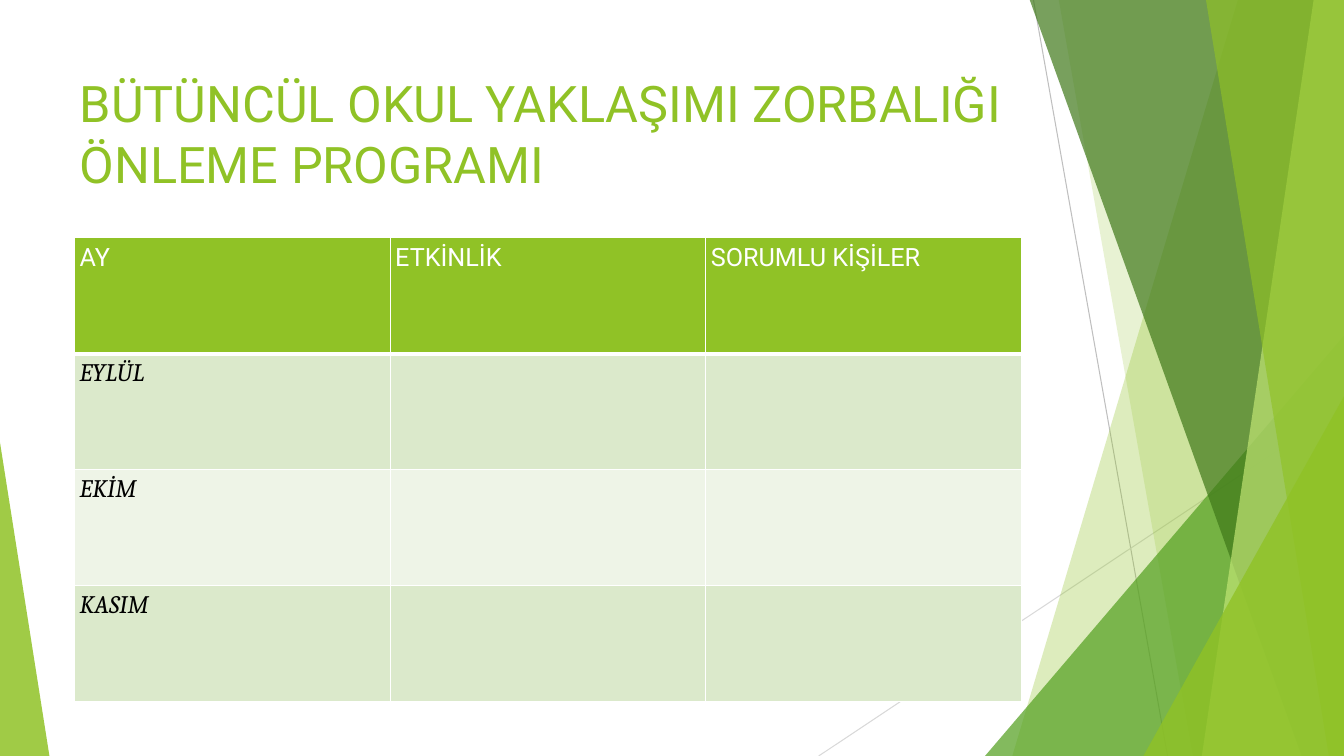
from dataclasses import dataclass

from lxml.etree import SubElement
from pptx import Presentation
from pptx.dml.color import RGBColor
from pptx.enum.shapes import MSO_CONNECTOR
from pptx.enum.text import MSO_ANCHOR
from pptx.oxml.ns import qn
from pptx.util import Pt

EMU_PER_PX = 9144
WIDTH, HEIGHT = 1333, 750


def px(length):
    return length * EMU_PER_PX


@dataclass(frozen=True)
class Theme:
    lime: str = "90C226"
    green: str = "54A021"
    forest: str = "3F7819"
    pale_lime: str = "C0E474"
    white: str = "FFFFFF"
    black: str = "000000"
    band_dark: str = "DBE9CB"
    band_light: str = "EEF4E7"
    line_dark: str = "BFBFBF"
    line_light: str = "D9D9D9"
    heading_font: str = "Roboto"
    month_font: str = "Cambria"
    title_size: int = 36
    cell_size: int = 18
    inset: int = 5


class SlideBuilder:
    def __init__(self, slide, theme):
        self.slide = slide
        self.theme = theme

    def line(self, start, end, color):
        connector = self.slide.shapes.add_connector(
            MSO_CONNECTOR.STRAIGHT, *map(px, start + end))
        connector.line.color.rgb = RGBColor.from_string(color)
        connector.line.width = Pt(0.75)
        SubElement(connector._element.spPr, qn("a:effectLst"))

    def facet(self, points, color, opacity):
        corners = [(px(x), px(y)) for x, y in points]
        builder = self.slide.shapes.build_freeform(*corners[0], scale=1.0)
        builder.add_line_segments(corners[1:], close=True)
        shape = builder.convert_to_shape()
        shape.shadow.inherit = False
        shape.line.fill.background()
        shape.fill.solid()
        shape.fill.fore_color.rgb = RGBColor.from_string(color)
        tint = shape._element.spPr.find(qn("a:solidFill"))[0]
        SubElement(tint, qn("a:alpha"), val=str(opacity * 1000))

    def style_text(self, paragraph, font_name, size, color, italic=False):
        for run in paragraph.runs:
            run.font.name = font_name
            run.font.size = Pt(size)
            run.font.color.rgb = RGBColor.from_string(color)
            run.font.italic = italic

    def set_insets(self, holder):
        inset = px(self.theme.inset)
        holder.margin_left = holder.margin_right = inset
        holder.margin_top = holder.margin_bottom = inset

    def title(self, text, left, top, width, height):
        frame = self.slide.shapes.add_textbox(
            *map(px, (left, top, width, height))).text_frame
        frame.word_wrap = True
        frame.vertical_anchor = MSO_ANCHOR.TOP
        self.set_insets(frame)
        frame.text = text
        self.style_text(frame.paragraphs[0], self.theme.heading_font,
                        self.theme.title_size, self.theme.lime)

    def border(self, cell, widths):
        properties = cell._tc.get_or_add_tcPr()
        for position, (side, points) in enumerate(widths.items()):
            edge = properties.makeelement(qn(f"a:{side}"), {"w": str(Pt(points))})
            fill = SubElement(edge, qn("a:solidFill"))
            SubElement(fill, qn("a:srgbClr"), val=self.theme.white)
            properties.insert(position, edge)

    def table(self, rows, left, top, column_width, row_height):
        theme = self.theme
        columns = len(rows[0])
        grid = self.slide.shapes.add_table(
            len(rows), columns, px(left), px(top),
            px(column_width * columns), px(row_height * len(rows))).table
        for row_index, texts in enumerate(rows):
            grid.rows[row_index].height = px(row_height)
            header = row_index == 0
            band = theme.band_dark if row_index % 2 else theme.band_light
            for column_index, text in enumerate(texts):
                cell = grid.cell(row_index, column_index)
                self.set_insets(cell)
                cell.fill.solid()
                cell.fill.fore_color.rgb = RGBColor.from_string(
                    theme.lime if header else band)
                self.border(cell, {"lnL": 1, "lnR": 1,
                                   "lnT": 3 if row_index == 1 else 1,
                                   "lnB": 3 if header else 1})
                paragraph = cell.text_frame.paragraphs[0]
                paragraph.text = text
                self.style_text(
                    paragraph,
                    theme.heading_font if header else theme.month_font,
                    theme.cell_size,
                    theme.white if header else theme.black,
                    italic=not header)


def main():
    theme = Theme()
    presentation = Presentation()
    presentation.slide_width = px(WIDTH)
    presentation.slide_height = px(HEIGHT)
    slide = presentation.slides.add_slide(presentation.slide_layouts[6])
    page = SlideBuilder(slide, theme)

    page.line((1025, 0), (1158, HEIGHT), theme.line_dark)
    page.line((WIDTH, 403), (812, HEIGHT), theme.line_light)

    right_bands = [
        (1228, -1, 1004, theme.lime, 30),
        (1050, -1, 1183, theme.lime, 20),
        (WIDTH, 333, 977, theme.green, 72),
        (1021, -1, 1291, theme.forest, 70),
        (1303, -1, 1192, theme.pale_lime, 70),
        (1196, -1, 1318, theme.lime, 65),
        (WIDTH, 393, 1134, theme.lime, 80),
    ]
    for top_x, top_y, bottom_x, color, opacity in right_bands:
        upper_edge = [(top_x, top_y)]
        if top_x < WIDTH:
            upper_edge.append((WIDTH, top_y))
        page.facet(upper_edge + [(WIDTH, HEIGHT), (bottom_x, HEIGHT)],
                   color, opacity)
    page.facet([(0, HEIGHT), (0, 439), (49, HEIGHT)], theme.lime, 85)

    page.title("BÜTÜNCÜL OKUL YAKLAŞIMI ZORBALIĞI ÖNLEME PROGRAMI",
               74, 67, 940, 144)
    months = ["EYLÜL", "EKİM", "KASIM"]
    program = [["AY", "ETKİNLİK", "SORUMLU KİŞİLER"]]
    program += [[month, "", ""] for month in months]
    page.table(program, 74, 236, 313, 115)

    presentation.save("out.pptx")


if __name__ == "__main__":
    main()
